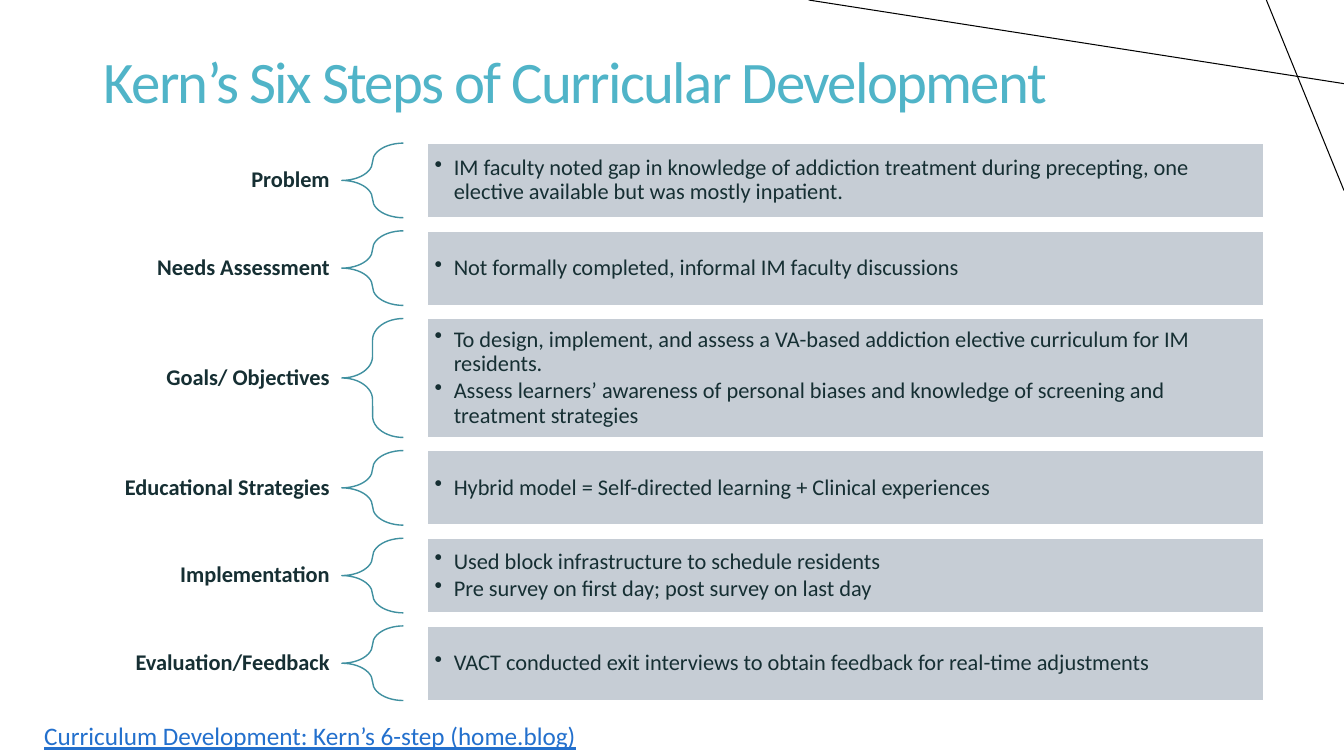
from lxml.etree import SubElement
from pptx import Presentation
from pptx.dml.color import RGBColor
from pptx.enum.shapes import MSO_CONNECTOR, MSO_SHAPE
from pptx.enum.text import MSO_ANCHOR, PP_ALIGN
from pptx.oxml.ns import qn
from pptx.util import Inches, Pt

BLACK = RGBColor(0x00, 0x00, 0x00)
WHITE = RGBColor(0xFF, 0xFF, 0xFF)
INK = RGBColor(0x16, 0x2F, 0x33)
TEAL = RGBColor(0x50, 0xB4, 0xC8)
DARK_TEAL = RGBColor(0x40, 0x90, 0xA0)
GREY = RGBColor(0xC0, 0xC8, 0xD1)
LINK_BLUE = RGBColor(0x23, 0x70, 0xCD)

WIDTH, HEIGHT = 13.33, 7.5
LABEL_LEFT, LABEL_WIDTH = 0.34, 3.05
BRACE_LEFT, BRACE_WIDTH = LABEL_LEFT + LABEL_WIDTH, 0.61
PANEL_LEFT, PANEL_WIDTH = 4.24, 8.29
FIRST_TOP, ROW_GAP = 1.42, 0.13
ROW_HEIGHT, TALL_HEIGHT = 0.74, 1.18

STEPS = [
    ("Problem", ROW_HEIGHT, [
        "IM faculty noted gap in knowledge of addiction treatment during precepting, "
        "one elective available but was mostly inpatient."]),
    ("Needs Assessment", ROW_HEIGHT, [
        "Not formally completed, informal IM faculty discussions"]),
    ("Goals/ Objectives", TALL_HEIGHT, [
        "To design, implement, and assess a VA-based addiction elective curriculum "
        "for IM residents.",
        "Assess learners’ awareness of personal biases and knowledge of screening "
        "and treatment strategies"]),
    ("Educational Strategies", ROW_HEIGHT, [
        "Hybrid model = Self-directed learning + Clinical experiences"]),
    ("Implementation", ROW_HEIGHT, [
        "Used block infrastructure to schedule residents",
        "Pre survey on first day; post survey on last day"]),
    ("Evaluation/Feedback", ROW_HEIGHT, [
        "VACT conducted exit interviews to obtain feedback for real-time adjustments"]),
]


def write(para, text, size, color, bold=False):
    para.text = text
    para.font.name = "Calibri"
    para.font.size = Pt(size)
    para.font.color.rgb = color
    para.font.bold = bold


def add_text_box(left, top, width, height, anchor):
    box = slide.shapes.add_textbox(Inches(left), Inches(top), Inches(width), Inches(height))
    box.text_frame.word_wrap = True
    box.text_frame.vertical_anchor = anchor
    return box.text_frame


deck = Presentation()
deck.slide_width, deck.slide_height = Inches(WIDTH), Inches(HEIGHT)
slide = deck.slides.add_slide(deck.slide_layouts[6])

# Corner lines
for x1, y1, x2, y2 in [(WIDTH, 0.83, 8.02, 0), (12.56, 0, WIDTH, 1.89)]:
    line = slide.shapes.add_connector(
        MSO_CONNECTOR.STRAIGHT, Inches(x1), Inches(y1), Inches(x2), Inches(y2))
    line.line.color.rgb = BLACK
    line.line.width = Pt(0.75)
    SubElement(line._element.spPr, qn("a:effectLst"))

# Six steps: label, brace and panel
top = FIRST_TOP
for name, height, points in STEPS:
    frame = add_text_box(LABEL_LEFT, top, LABEL_WIDTH, height, MSO_ANCHOR.MIDDLE)
    frame.margin_left = frame.margin_right = Inches(0.12)
    label = frame.paragraphs[0]
    write(label, name, 16, INK, bold=True)
    label.alignment = PP_ALIGN.RIGHT
    label.line_spacing = 0.9

    brace = slide.shapes.add_shape(
        MSO_SHAPE.LEFT_BRACE, Inches(BRACE_LEFT), Inches(top), Inches(BRACE_WIDTH), Inches(height))
    brace.adjustments[0] = 0.35
    brace.fill.background()
    brace.line.color.rgb = DARK_TEAL
    brace.line.width = Pt(1)
    brace.shadow.inherit = False

    panel = slide.shapes.add_shape(
        MSO_SHAPE.RECTANGLE, Inches(PANEL_LEFT), Inches(top), Inches(PANEL_WIDTH), Inches(height))
    panel.fill.solid()
    panel.fill.fore_color.rgb = GREY
    fill_color = panel._element.spPr.find(qn("a:solidFill")).find(qn("a:srgbClr"))
    SubElement(fill_color, qn("a:alpha"), val="90000")
    panel.line.color.rgb = WHITE
    panel.line.width = Pt(1)
    panel.shadow.inherit = False

    frame = panel.text_frame
    frame.word_wrap = True
    frame.vertical_anchor = MSO_ANCHOR.MIDDLE
    frame.margin_left = frame.margin_right = Inches(0.07)
    frame.margin_top = frame.margin_bottom = Inches(0.07)
    for index, point in enumerate(points):
        para = frame.add_paragraph() if index else frame.paragraphs[0]
        write(para, point, 16, INK)
        para.alignment = PP_ALIGN.LEFT
        para.line_spacing = 0.9
        para.space_after = Pt(2.4)
        properties = para._p.get_or_add_pPr()
        properties.set("marL", str(Inches(0.19)))
        properties.set("indent", str(-Inches(0.19)))
        bullet = SubElement(properties, qn("a:buChar"), char="•")
        properties.find(qn("a:defRPr")).addprevious(bullet)
    top += height + ROW_GAP

# Title
title = add_text_box(0.93, -0.06, 10.46, 1.81, MSO_ANCHOR.MIDDLE).paragraphs[0]
write(title, "Kern’s Six Steps of Curricular Development", 42, TEAL)
title.line_spacing = 0.85
title.runs[0].font._element.set("spc", "-120")

# Source line
source = add_text_box(LABEL_LEFT, 7.1, 6.68, 0.4, MSO_ANCHOR.TOP).paragraphs[0]
write(source, "Curriculum Development: Kern’s 6-step (home.blog)", 18, LINK_BLUE)
source.font.underline = True

deck.save("out.pptx")
